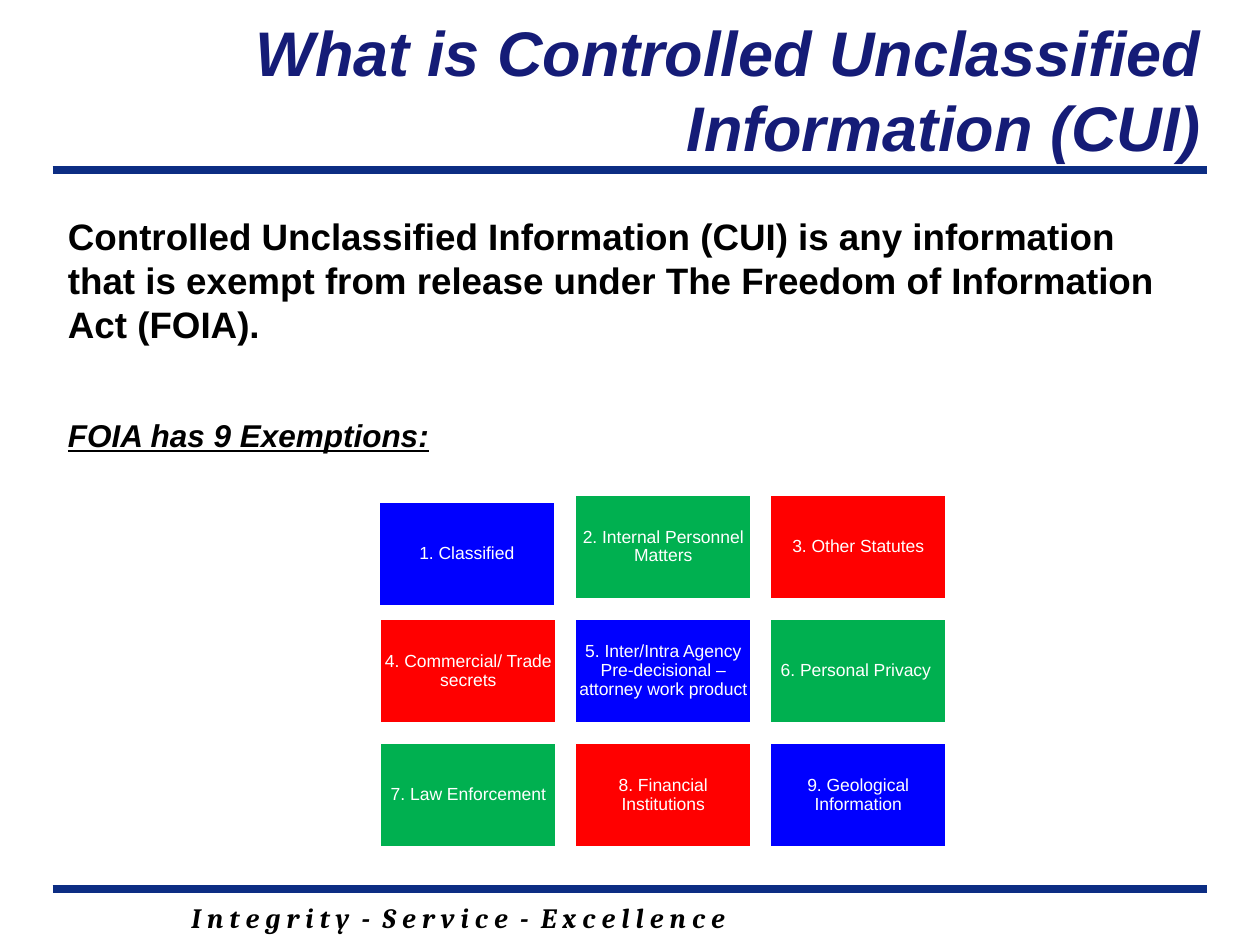
from pptx import Presentation
from pptx.dml.color import RGBColor
from pptx.enum.shapes import MSO_CONNECTOR, MSO_SHAPE
from pptx.enum.text import MSO_ANCHOR, PP_ALIGN
from pptx.oxml.ns import qn
from pptx.util import Cm, Pt
from lxml import etree

RECT = MSO_SHAPE.RECTANGLE
STRAIGHT = MSO_CONNECTOR.STRAIGHT
MIDDLE = MSO_ANCHOR.MIDDLE
CENTER, RIGHT = PP_ALIGN.CENTER, PP_ALIGN.RIGHT
COLORS = {
    "rule": "0C2D83",
    "title": "151C77",
    "black": "000000",
    "white": "FFFFFF",
    "blue": "0000FF",
    "green": "00B050",
    "red": "FF0000",
}


def rgb(name):
    return RGBColor.from_string(COLORS[name])


def style(p, text, size, color, font="Arial", bold=True, italic=False):
    p.text = text
    f = p.font
    f.name, f.size, f.bold, f.italic = font, Pt(size), bold, italic
    f.color.rgb = rgb(color)


prs = Presentation()
prs.slide_width, prs.slide_height = Cm(25.4), Cm(19.05)
s = prs.slides.add_slide(prs.slide_layouts[6])

sp = s.shapes.add_textbox(Cm(3.61), Cm(18.03), Cm(18.21), Cm(0.94))
tf = sp.text_frame
tf.word_wrap = True
style(tf.paragraphs[0], "I n t e g r i t y  -  S e r v i c e  -  E x c e l l e n c e",
      16, "black", font="Cambria", italic=True)

for y in (17.93, 3.43):
    line = s.shapes.add_connector(STRAIGHT, Cm(1.06), Cm(y), Cm(24.34), Cm(y))
    line.line.color.rgb = rgb("rule")
    line.line.width = Pt(4.5)
    etree.SubElement(line._element.spPr, qn("a:effectLst"))

sp = s.shapes.add_textbox(Cm(4.62), Cm(0.2), Cm(19.84), Cm(3.18))
tf = sp.text_frame
tf.word_wrap = True
tf.vertical_anchor = MIDDLE
p = tf.paragraphs[0]
p.alignment = RIGHT
style(p, "What is Controlled Unclassified Information (CUI)", 36, "title", italic=True)

sp = s.shapes.add_textbox(Cm(0.76), Cm(4.19), Cm(23.32), Cm(13.18))
tf = sp.text_frame
tf.word_wrap = True
p = tf.paragraphs[0]
style(p, "Controlled Unclassified Information (CUI) is any information that is exempt "
         "from release under The Freedom of Information Act (FOIA).", 21, "black")
p = tf.add_paragraph()
style(p, "FOIA has 9 Exemptions:", 18, "black", italic=True)
p.font.underline = True
p.space_before = Pt(40)
for p in tf.paragraphs:
    p._p.get_or_add_pPr().set("marL", str(Cm(0.36)))

exemptions = [
    ("1. Classified", "blue"),
    ("2. Internal Personnel Matters", "green"),
    ("3. Other Statutes", "red"),
    ("4. Commercial/ Trade secrets", "red"),
    ("5. Inter/Intra Agency Pre-decisional – attorney work product", "blue"),
    ("6. Personal Privacy ", "green"),
    ("7. Law Enforcement", "green"),
    ("8. Financial Institutions", "red"),
    ("9. Geological Information", "blue"),
]
for i, (text, color) in enumerate(exemptions):
    row, col = divmod(i, 3)
    x, y = (7.65 + 3.93 * col, 9.96 + 2.5 * row) if i else (7.62, 10.11)
    sp = s.shapes.add_shape(RECT, Cm(x), Cm(y), Cm(3.58), Cm(2.13))
    sp.shadow.inherit = False
    sp.fill.solid()
    sp.fill.fore_color.rgb = rgb(color)
    sp.line.color.rgb = rgb("white")
    sp.line.width = Pt(2)
    tf = sp.text_frame
    tf.word_wrap = True
    tf.vertical_anchor = MIDDLE
    tf.margin_left = tf.margin_right = tf.margin_top = tf.margin_bottom = Cm(0.1)
    p = tf.paragraphs[0]
    p.alignment = CENTER
    p.line_spacing = 0.9
    style(p, text, 10, "white", bold=False)

prs.save("out.pptx")
